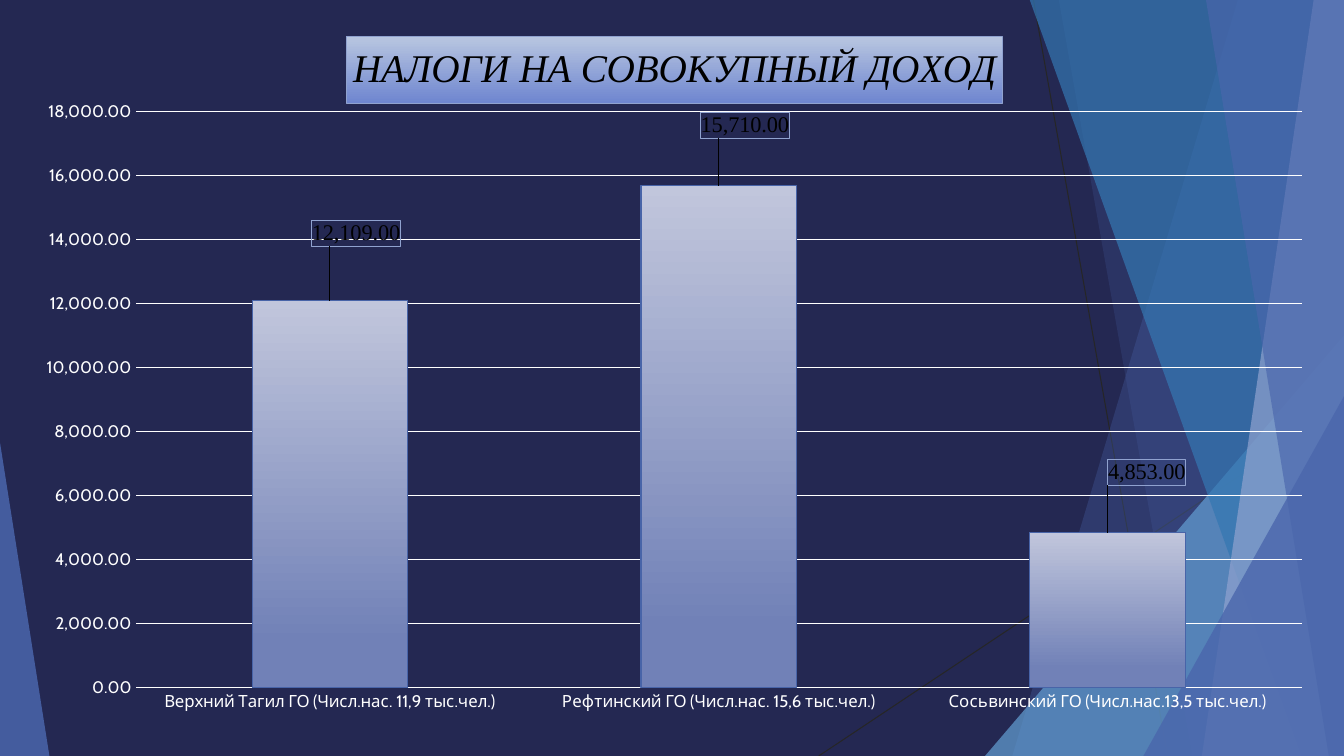
from lxml import etree
from pptx import Presentation
from pptx.chart.data import CategoryChartData
from pptx.dml.color import RGBColor
from pptx.enum.chart import XL_CHART_TYPE, XL_LABEL_POSITION, XL_TICK_MARK
from pptx.enum.shapes import MSO_CONNECTOR, MSO_SHAPE
from pptx.oxml import parse_xml
from pptx.oxml.ns import nsdecls, qn
from pptx.util import Inches, Pt

COLORS = {
    "background": "242852", "ray": "262626", "blue": "4A66AC", "sky": "629DD1",
    "teal": "3477B2", "pale": "90A2CF", "white": "FFFFFF", "black": "000000",
    "bar_top": "C1C6DC", "bar_bottom": "7181B7", "bar_line": "4864A8",
    "title_top": "B8C6E0", "title_bottom": "6F86D0",
}


def rgb(name):
    return RGBColor.from_string(COLORS[name])


def manual_layout(**values):
    items = "".join(f'<c:{key} val="{value}"/>' for key, value in values.items())
    return parse_xml(f'<c:manualLayout {nsdecls("c")}>{items}</c:manualLayout>')


prs = Presentation()
prs.slide_width, prs.slide_height = Inches(13.33), Inches(7.5)
s = prs.slides.add_slide(prs.slide_layouts[6])
s.background.fill.solid()
s.background.fill.fore_color.rgb = rgb("background")

# Thin rays
for x1, y1, x2, y2 in [(10.25, 0, 11.58, 7.5), (13.33, 4.03, 8.12, 7.5)]:
    ray = s.shapes.add_connector(MSO_CONNECTOR.STRAIGHT, Inches(x1), Inches(y1),
                                 Inches(x2), Inches(y2))
    ray.line.color.rgb = rgb("ray")
    ray.line.width = Pt(0.75)
    etree.SubElement(ray._element.spPr, qn("a:effectLst"))

# Facets: bands (top x, bottom x) run to the right edge;
# triangles are (left, top, width, height, apex)
facets = [
    ((12.28, 10.04), "blue", 30),
    ((10.5, 11.83), "blue", 20),
    ((9.77, 3.33, 3.56, 4.17, 1), "sky", 72),
    ((10.21, 12.91), "teal", 70),
    ((13.03, 11.92), "pale", 70),
    ((11.96, 13.18), "blue", 65),
    ((11.34, 3.93, 1.99, 3.57, 1), "blue", 80),
    ((0, 4.39, 0.49, 3.11, 0), "blue", 85),
]
for geometry, color, opacity in facets:
    if len(geometry) == 2:
        top_x, bottom_x = geometry
        outline = s.shapes.build_freeform(Inches(top_x), Inches(-0.01))
        outline.add_line_segments([(Inches(x), Inches(y)) for x, y in
                                   [(13.33, -0.01), (13.33, 7.5), (bottom_x, 7.5)]])
        sp = outline.convert_to_shape()
    else:
        *box, apex = geometry
        sp = s.shapes.add_shape(MSO_SHAPE.ISOSCELES_TRIANGLE, *map(Inches, box))
        sp.adjustments[0] = apex
    sp.shadow.inherit = False
    sp.line.fill.background()
    sp.fill.solid()
    sp.fill.fore_color.rgb = rgb(color)
    srgb = sp._element.spPr.find(".//" + qn("a:srgbClr"))
    etree.SubElement(srgb, qn("a:alpha"), val=str(opacity * 1000))

# Chart
data = CategoryChartData(number_format="#,##0.00")
data.categories = ["Верхний Тагил ГО (Числ.нас. 11,9 тыс.чел.)",
                   "Рефтинский ГО (Числ.нас. 15,6 тыс.чел.)",
                   "Сосьвинский ГО (Числ.нас.13,5 тыс.чел.)"]
data.add_series("Series 1", [12109, 15710, 4853])
chart = s.shapes.add_chart(XL_CHART_TYPE.COLUMN_CLUSTERED, Inches(0.19), Inches(0.15),
                           Inches(12.97), Inches(7.06), data).chart
chart.has_legend = False
chart.font.name = "Cabin"
chart.font.size = Pt(10)
chart.font.color.rgb = rgb("white")

# Chart title
chart.has_title = True
title = chart.chart_title
p = title.text_frame.paragraphs[0]
p.text = "НАЛОГИ НА СОВОКУПНЫЙ ДОХОД"
p.font.name = "Times New Roman"
p.font.size = Pt(28)
p.font.bold = False
p.font.italic = True
p.font.color.rgb = rgb("black")

# Gradients of the title and the bars
plot = chart.plots[0]
plot.gap_width = 150
plot.vary_by_categories = False
series = plot.series[0]
for part, top, bottom, end, line in [
        (title, "title_top", "title_bottom", 1, "pale"),
        (series, "bar_top", "bar_bottom", 0.88, "bar_line")]:
    fill = part.format.fill
    fill.gradient()
    fill.gradient_angle = 270
    first, last = fill.gradient_stops
    first.color.rgb, last.color.rgb = rgb(top), rgb(bottom)
    first.position, last.position = 0, end
    part.format.line.color.rgb = rgb(line)
    part.format.line.width = Pt(0.75)

# Axes
for axis in (chart.category_axis, chart.value_axis):
    axis.major_tick_mark = axis.minor_tick_mark = XL_TICK_MARK.NONE
    axis.format.line.fill.background()
    axis.tick_labels.font.name = "Cabin"
    axis.tick_labels.font.size = Pt(12)
    axis.tick_labels.font.color.rgb = rgb("white")
axis = chart.value_axis
axis.minimum_scale, axis.maximum_scale, axis.major_unit = 0, 18000, 2000
axis.tick_labels.number_format = "#,##0.00"
axis.tick_labels.number_format_is_linked = False
axis.major_gridlines.format.line.color.rgb = rgb("white")
axis.major_gridlines.format.line.width = Pt(0.75)

# Framed value labels, shifted up and right of the bars
for i, (dx, dy) in enumerate([(0.02, -0.07), (0.02, -0.06), (0.03, -0.06)]):
    label = series.points[i].data_label
    label.position = XL_LABEL_POSITION.OUTSIDE_END
    label.font.name = "Times New Roman"
    label.font.size = Pt(16)
    label.font.color.rgb = rgb("black")
    d_lbl = series._element.findall(".//" + qn("c:dLbl"))[i]
    layout = parse_xml(f'<c:layout {nsdecls("c")}/>')
    layout.append(manual_layout(x=dx, y=dy))
    d_lbl.insert(1, layout)
    d_lbl.insert(2, parse_xml(
        f'<c:numFmt {nsdecls("c")} formatCode="#,##0.00" sourceLinked="0"/>'))
    frame = d_lbl.find(qn("c:spPr"))
    if frame is not None:
        d_lbl.remove(frame)
    d_lbl.insert(3, parse_xml(
        f'<c:spPr {nsdecls("c", "a")}><a:noFill/><a:ln w="9525"><a:solidFill>'
        f'<a:srgbClr val="{COLORS["pale"]}"/></a:solidFill></a:ln></c:spPr>'))

# Places of the title and the plot area
for tag, values in [
        ("c:title", dict(xMode="edge", yMode="edge", x=0.25, y=0.03)),
        ("c:plotArea", dict(layoutTarget="inner", xMode="edge", yMode="edge",
                            x=0.089, y=0.136, w=0.892, h=0.809))]:
    owner = chart._chartSpace.find(".//" + qn(tag))
    layout = owner.find(qn("c:layout"))
    if layout is None:
        layout = parse_xml(f'<c:layout {nsdecls("c")}/>')
        owner.insert(1 if tag == "c:title" else 0, layout)
    layout.append(manual_layout(**values))

prs.save("out.pptx")
